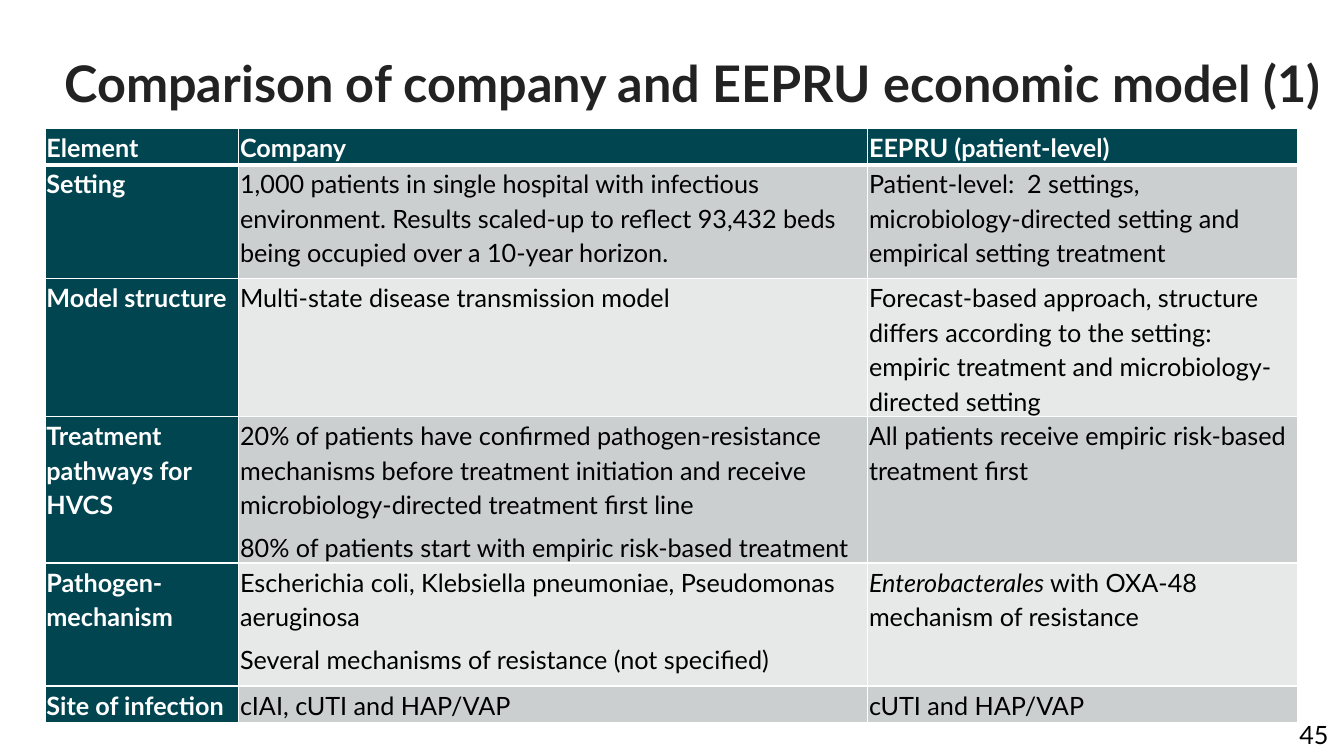
from lxml.etree import SubElement
from pptx import Presentation
from pptx.dml.color import RGBColor
from pptx.enum.text import MSO_ANCHOR as Anchor, MSO_AUTO_SIZE as AutoSize, PP_ALIGN as Align
from pptx.oxml.ns import qn
from pptx.util import Cm, Pt

TEAL, WHITE, BLACK = "004550", "FFFFFF", "000000"
BANDS = ["CCCFD0", "E7E9E9"]


def add_run(paragraph, text, size, color, bold=False, italic=False):
    run = paragraph.add_run()
    run.text = text
    run.font.name = "Lato"
    run.font.size = Pt(size)
    run.font.bold = bold
    run.font.italic = italic
    run.font.color.rgb = RGBColor.from_string(color)


def add_border(cell, position, side, points):
    line = SubElement(cell._tc.get_or_add_tcPr(), qn(f"a:ln{side}"), w=str(Pt(points)))
    fill = SubElement(line, qn("a:solidFill"))
    SubElement(fill, qn("a:srgbClr"), val=WHITE)
    cell._tc.tcPr.insert(position, line)


prs = Presentation()
prs.slide_width, prs.slide_height = Cm(33.87), Cm(19.05)
slide = prs.slides.add_slide(prs.slide_layouts[5])

title = slide.shapes.title
title.left, title.top, title.width, title.height = Cm(1.37), Cm(1.35), Cm(32.49), Cm(3.56)
title_frame = title.text_frame
title_frame.auto_size = AutoSize.NONE
title_frame.vertical_anchor = Anchor.TOP
title_frame.margin_right = 0
heading = title_frame.paragraphs[0]
heading.alignment = Align.LEFT
heading.line_spacing = 0.9
add_run(heading, "Comparison of company and EEPRU economic model (1)", 36, "222222", bold=True)

comparison = [
    ("Element", ["Company"], ["EEPRU (patient-level)"]),
    ("Setting",
     ["1,000 patients in single hospital with infectious environment. "
      "Results scaled-up to reflect 93,432 beds being occupied over a 10-year horizon."],
     ["Patient-level:  2 settings, microbiology-directed setting and empirical setting treatment"]),
    ("Model structure",
     ["Multi-state disease transmission model"],
     ["Forecast-based approach, structure differs according to the setting: "
      "empiric treatment and microbiology-directed setting"]),
    ("Treatment pathways for HVCS",
     ["20% of patients have confirmed pathogen-resistance mechanisms before treatment "
      "initiation and receive microbiology-directed treatment first line",
      "80% of patients start with empiric risk-based treatment"],
     ["All patients receive empiric risk-based treatment first"]),
    ("Pathogen-mechanism",
     ["Escherichia coli, Klebsiella pneumoniae, Pseudomonas aeruginosa",
      "Several mechanisms of resistance (not specified)"],
     ["Enterobacterales with OXA-48 mechanism of resistance"]),
    ("Site of infection", ["cIAI, cUTI and HAP/VAP"], ["cUTI and HAP/VAP"]),
]
column_widths = [4.88, 15.85, 10.82]
row_heights = [0.92, 2.87, 3.48, 3.68, 3.1, 0.92]
italic_name = "Enterobacterales"

table = slide.shapes.add_table(
    len(comparison), len(column_widths), Cm(1.14), Cm(3.23),
    Cm(sum(column_widths)), Cm(sum(row_heights))).table
for column, width in zip(table.columns, column_widths):
    column.width = Cm(width)

for r, (element, company, eepru) in enumerate(comparison):
    table.rows[r].height = Cm(row_heights[r])
    for c, paragraphs in enumerate([[element], company, eepru]):
        cell = table.cell(r, c)
        is_header = r == 0 or c == 0
        cell.margin_left = cell.margin_right = Cm(0.03)
        cell.margin_top = cell.margin_bottom = 0
        cell.fill.solid()
        cell.fill.fore_color.rgb = RGBColor.from_string(TEAL if is_header else BANDS[(r - 1) % 2])
        top, bottom = 3 if r == 1 else 1, 3 if r == 0 else 1
        for position, (side, points) in enumerate([("L", 1), ("R", 1), ("T", top), ("B", bottom)]):
            add_border(cell, position, side, points)

        for i, text in enumerate(paragraphs):
            frame = cell.text_frame
            paragraph = frame.paragraphs[0] if i == 0 else frame.add_paragraph()
            paragraph.line_spacing = 1.14
            paragraph.space_after = Pt(6)
            if text.startswith(italic_name):
                add_run(paragraph, italic_name, 18, BLACK, italic=True)
                text = text.removeprefix(italic_name)
            add_run(paragraph, text, 18, WHITE if is_header else BLACK, bold=is_header)

page_frame = slide.shapes.add_textbox(Cm(29.06), Cm(18.01), Cm(4.67), Cm(1.02)).text_frame
page_frame.word_wrap = True
page_number = page_frame.paragraphs[0]
page_number.alignment = Align.RIGHT
add_run(page_number, "45", 18, BLACK)

prs.save("out.pptx")
